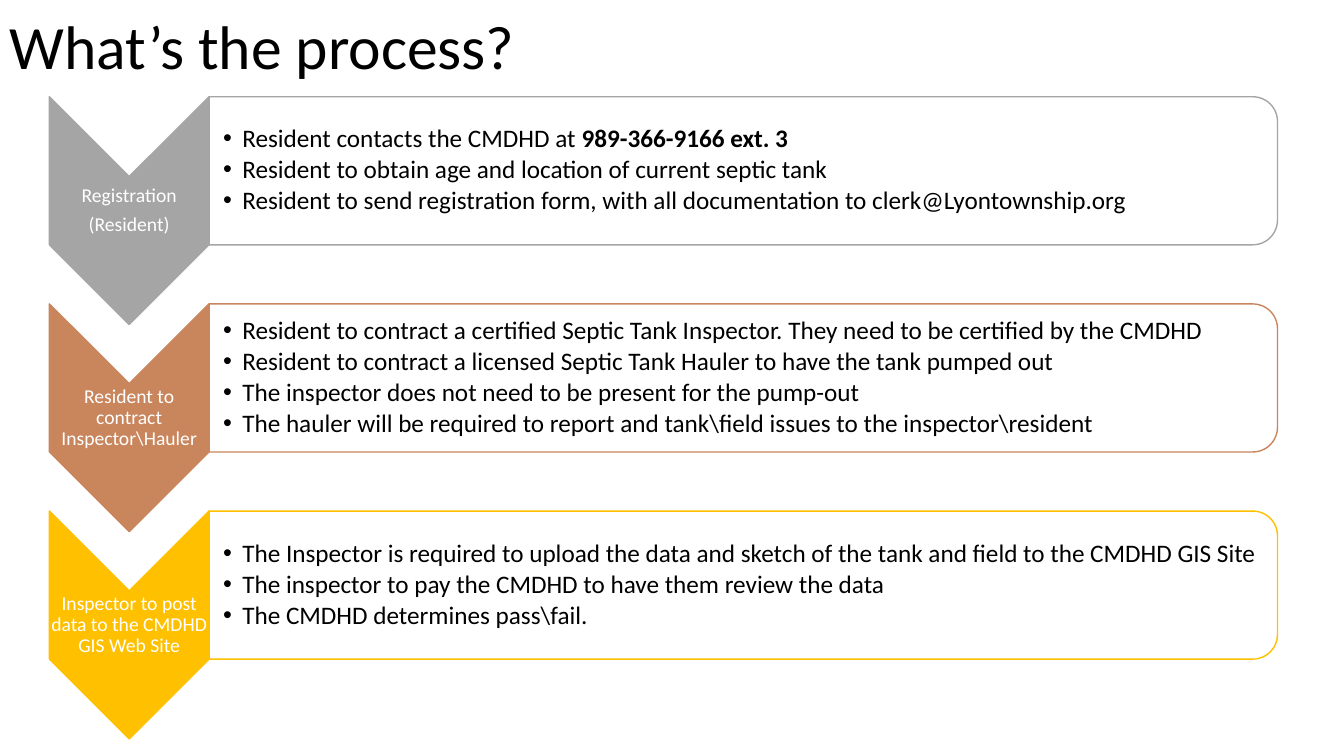
from lxml import etree
from pptx import Presentation
from pptx.dml.color import RGBColor
from pptx.enum.shapes import MSO_SHAPE
from pptx.enum.text import MSO_ANCHOR, PP_ALIGN
from pptx.oxml.ns import qn
from pptx.util import Inches, Pt

CHEVRON = MSO_SHAPE.CHEVRON
ROUND_TOP = MSO_SHAPE.ROUND_2_SAME_RECTANGLE
MIDDLE = MSO_ANCHOR.MIDDLE
LEFT, CENTER = PP_ALIGN.LEFT, PP_ALIGN.CENTER

FONT = "Calibri"
WIDTH, HEIGHT = 13.33, 7.5
ROW_LEFT, ROW_TOP, ROW_WIDTH = 0.49, 0.96, 12.18
ROW_HEIGHT, ROW_PITCH = 2.26, 2.055
ARROW_WIDTH = 0.13 * ROW_WIDTH
PANEL_HEIGHT = 0.65 * ROW_HEIGHT

# Each step: colour, label paragraphs, bullets made of (text, bold) runs
STEPS = [
    ("A5A5A5", ["Registration", "(Resident)"], [
        [("Resident contacts the CMDHD at ", False), ("989-366-9166 ext. 3", True)],
        [("Resident to obtain age and location of current septic tank", False)],
        [("Resident to send registration form, with all documentation to "
          "clerk@Lyontownship.org", False)],
    ]),
    ("C9855C", ["Resident to contract Inspector\\Hauler"], [
        [("Resident to contract a certified Septic Tank Inspector. "
          "They need to be certified by the CMDHD", False)],
        [("Resident to contract a licensed Septic Tank Hauler "
          "to have the tank pumped out", False)],
        [("The inspector does not need to be present for the pump-out", False)],
        [("The hauler will be required to report and tank\\field issues "
          "to the inspector\\resident", False)],
    ]),
    ("FFC000", ["Inspector to post data to the CMDHD GIS Web Site"], [
        [("The Inspector is required to upload the data and sketch of the tank "
          "and field to the CMDHD GIS Site", False)],
        [("The inspector to pay the CMDHD to have them review the data", False)],
        [("The CMDHD determines pass\\fail.", False)],
    ]),
]


def rgb(color):
    return RGBColor.from_string(color)


def add_turned(slide, kind, x, y, w, h, fill, line):
    """Add a shape turned by 90 degrees that covers the given box."""
    sp = slide.shapes.add_shape(kind, Inches(x + (w - h) / 2), Inches(y + (h - w) / 2),
                                Inches(h), Inches(w))
    sp.rotation = 90
    sp.shadow.inherit = False
    sp.fill.solid()
    sp.fill.fore_color.rgb = rgb(fill)
    sp.line.color.rgb = rgb(line)
    sp.line.width = Pt(1)
    return sp


def add_bullet(p):
    pPr = p._p.get_or_add_pPr()
    pPr.set("marL", str(Inches(0.19)))
    pPr.set("indent", str(-Inches(0.19)))
    etree.SubElement(pPr, qn("a:buFont"), typeface="Arial")
    etree.SubElement(pPr, qn("a:buChar"), char="•")


def add_text(slide, x, y, w, h, paragraphs, size, color, align=LEFT,
             insets=(0.01, 0.01), after=0, bullets=False):
    tf = slide.shapes.add_textbox(Inches(x), Inches(y), Inches(w), Inches(h)).text_frame
    tf.word_wrap = True
    tf.vertical_anchor = MIDDLE
    tf.margin_left, tf.margin_right = (Inches(inset) for inset in insets)
    tf.margin_top = tf.margin_bottom = Inches(0.01)
    for i, runs in enumerate(paragraphs):
        p = tf.add_paragraph() if i else tf.paragraphs[0]
        p.alignment = align
        p.line_spacing = 0.9
        p.space_after = Pt(after)
        if bullets:
            add_bullet(p)
        for text, bold in runs:
            r = p.add_run()
            r.text = text
            r.font.name = FONT
            r.font.size = Pt(size)
            r.font.bold = bold
            r.font.color.rgb = rgb(color)


def add_title(slide, x, y, w, h):
    add_text(slide, x, y, w, h, [[("What’s the process?", False)]], 44, "000000",
             insets=(0.1, 0.1))


def add_step(slide, x, y, w, h, color, label, bullets):
    # Arrow with its label below the notch
    notch = ARROW_WIDTH / 2
    add_turned(slide, CHEVRON, x, y, ARROW_WIDTH, h, color, color)
    add_text(slide, x, y + notch, ARROW_WIDTH, h - 2 * notch,
             [[(line, False)] for line in label], 14, "FFFFFF", CENTER, after=4.9)
    # Panel with the bullets
    panel_x, panel_w = x + ARROW_WIDTH, w - ARROW_WIDTH
    add_turned(slide, ROUND_TOP, panel_x, y, panel_w, PANEL_HEIGHT, "FFFFFF", color)
    add_text(slide, panel_x, y + 0.07, panel_w - 0.07, PANEL_HEIGHT - 0.14,
             bullets, 18, "000000", insets=(0.14, 0.01), after=2.7, bullets=True)


def main():
    prs = Presentation()
    prs.slide_width, prs.slide_height = Inches(WIDTH), Inches(HEIGHT)
    slide = prs.slides.add_slide(prs.slide_layouts[6])
    add_title(slide, 0, 0.02, 11.5, 0.94)
    for i, step in enumerate(STEPS):
        add_step(slide, ROW_LEFT, ROW_TOP + i * ROW_PITCH, ROW_WIDTH, ROW_HEIGHT, *step)
    prs.save("out.pptx")


if __name__ == "__main__":
    main()
